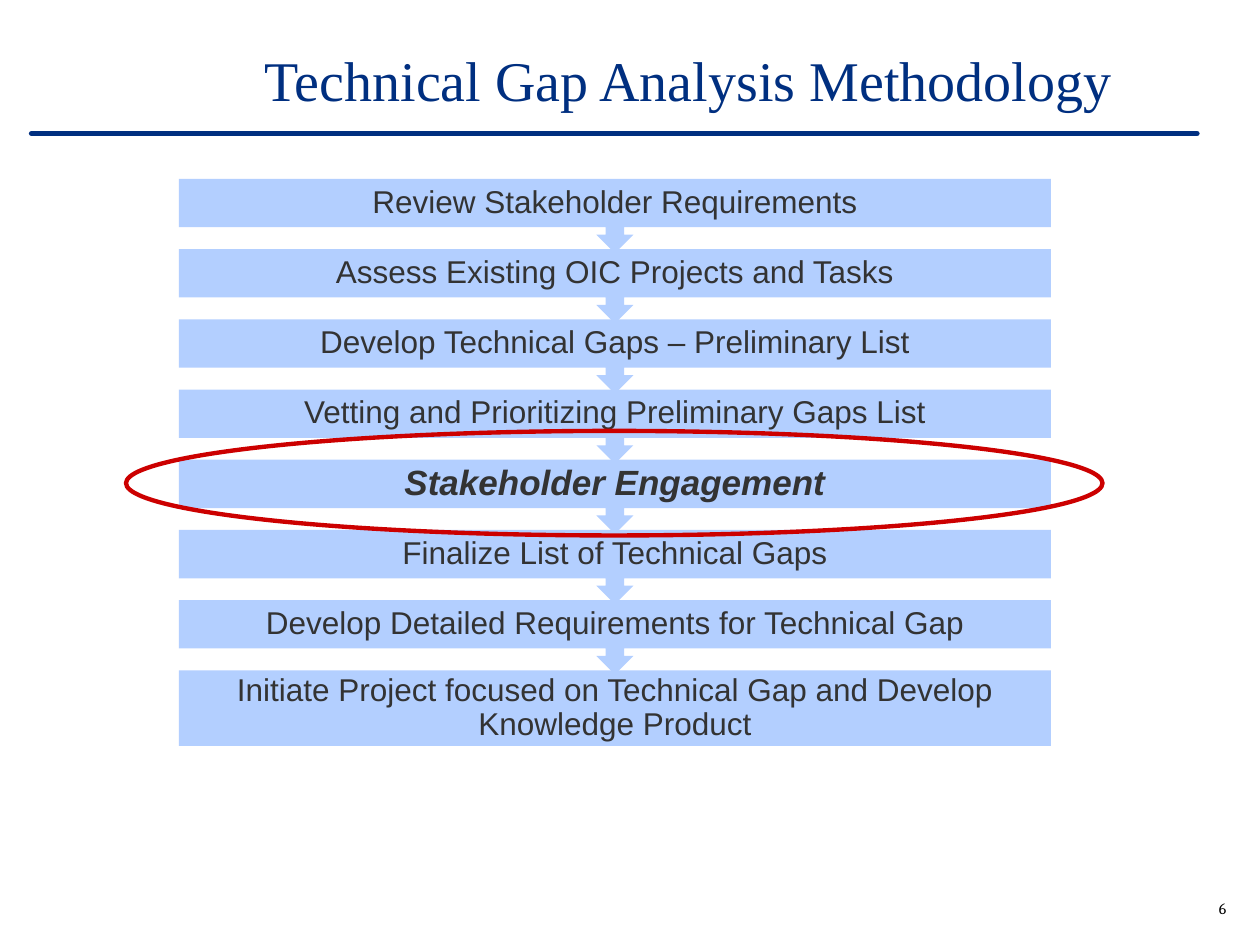
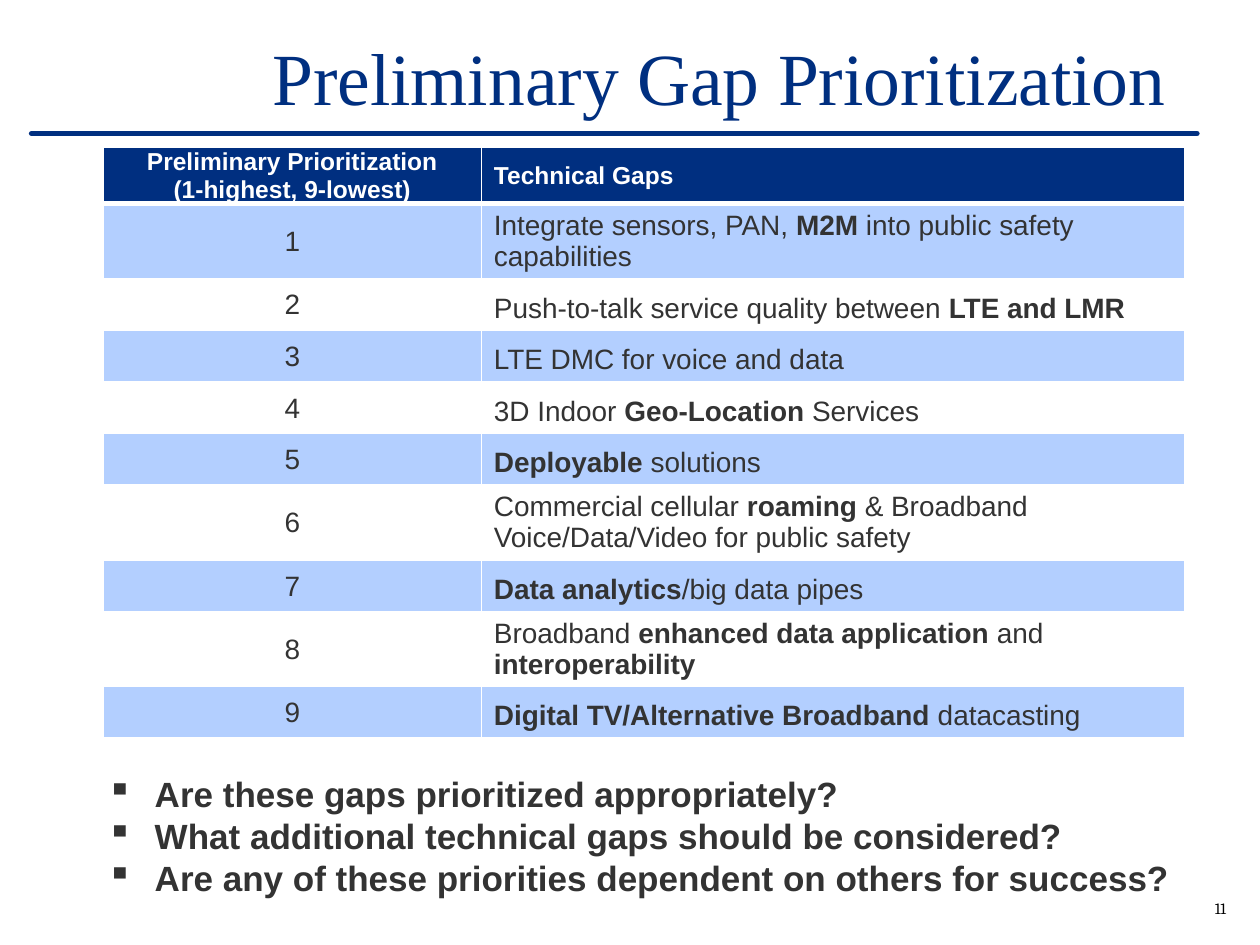
from lxml.etree import SubElement
from pptx import Presentation
from pptx.dml.color import RGBColor
from pptx.enum.shapes import MSO_CONNECTOR, MSO_SHAPE
from pptx.enum.text import MSO_ANCHOR, MSO_AUTO_SIZE, PP_ALIGN
from pptx.oxml.ns import qn
from pptx.util import Inches, Pt

COLORS = {"navy": "002F80", "sky": "B3CFFF", "red": "CC0000",
          "gray": "333333", "white": "FFFFFF", "black": "000000"}

STEPS = [
    "Review Stakeholder Requirements",
    "Assess Existing OIC Projects and Tasks",
    "Develop Technical Gaps – Preliminary List",
    "Vetting and Prioritizing Preliminary Gaps List",
    "Stakeholder Engagement",
    "Finalize List of Technical Gaps",
    "Develop Detailed Requirements for Technical Gap",
    "Initiate Project focused on Technical Gap and Develop Knowledge Product",
]
CURRENT_STEP = "Stakeholder Engagement"

GAPS = [
    "Integrate sensors, PAN, **M2M** into public safety capabilities",
    "Push-to-talk service quality between **LTE and LMR**",
    "LTE DMC for voice and data",
    "3D Indoor **Geo-Location** Services",
    "**Deployable** solutions",
    "Commercial cellular **roaming** & Broadband Voice/Data/Video for public safety",
    "**Data analytics**/big data pipes",
    "Broadband **enhanced data application** and **interoperability**",
    "**Digital TV/Alternative Broadband** datacasting",
]

QUESTIONS = [
    "Are these gaps prioritized appropriately?",
    "What additional technical gaps should be considered?",
    "Are any of these priorities dependent on others for success?",
]


def rgb(name):
    return RGBColor.from_string(COLORS[name])


class Deck:
    """Holds the shared style and the current slide."""

    def __init__(self):
        self.prs = Presentation()
        self.prs.slide_width, self.prs.slide_height = Inches(10), Inches(7.5)
        self.s = None

    def slide(self, title, box, size, number):
        self.s = self.prs.slides.add_slide(self.prs.slide_layouts[5])
        sp = self.s.shapes.title
        sp.left, sp.top, sp.width, sp.height = map(Inches, box)
        self.frame(sp.text_frame, [title], size=size, color="navy", name="Times New Roman")
        self.rule()
        self.text((9.25, 7.08, 0.58, 0.25), [str(number)], size=9, color="black",
                  name="Cambria", align=PP_ALIGN.RIGHT, anchor=MSO_ANCHOR.BOTTOM)

    def rule(self):
        y = Inches(1.06)
        cxn = self.s.shapes.add_connector(MSO_CONNECTOR.STRAIGHT, Inches(0.25), y, Inches(9.5), y)
        cxn.line.color.rgb = rgb("navy")
        cxn.line.width = Pt(3)
        cxn.line._get_or_add_ln().set("cap", "rnd")
        SubElement(cxn._element.spPr, qn("a:effectLst"))

    def frame(self, tf, lines, anchor=MSO_ANCHOR.MIDDLE, **style):
        tf.word_wrap = True
        tf.auto_size = MSO_AUTO_SIZE.NONE
        tf.vertical_anchor = anchor
        self.paragraphs(tf, lines, **style)

    def paragraphs(self, tf, lines, size, color="gray", name="Arial", bold=False,
                   italic=False, align=PP_ALIGN.LEFT, spacing=None, bullet=None):
        for i, line in enumerate(lines):
            p = tf.add_paragraph() if i else tf.paragraphs[0]
            p.alignment = align
            if spacing:
                p.line_spacing = spacing
            if bullet:
                pPr = p._p.get_or_add_pPr()
                pPr.set("marL", str(Inches(0.38)))
                pPr.set("indent", str(-Inches(0.38)))
                SubElement(pPr, qn("a:buChar"), char=bullet)
            for j, part in enumerate(line.split("**")):
                if part:
                    r = p.add_run()
                    r.text = part
                    style = {"size": Pt(size), "name": name, "bold": bold or j % 2 == 1,
                             "italic": italic}
                    for key, value in style.items():
                        setattr(r.font, key, value)
                    r.font.color.rgb = rgb(color)

    def text(self, box, lines, **style):
        sp = self.s.shapes.add_textbox(*map(Inches, box))
        self.frame(sp.text_frame, lines, **style)

    def shape(self, kind, box, fill=None, line=None, width=2.5):
        sp = self.s.shapes.add_shape(kind, *map(Inches, box))
        sp.shadow.inherit = False
        if fill:
            sp.fill.solid()
            sp.fill.fore_color.rgb = rgb(fill)
        else:
            sp.fill.background()
        if line:
            sp.line.color.rgb = rgb(line)
            sp.line.width = Pt(width)
        else:
            sp.line.fill.background()
        return sp

    def step(self, kind, box, label, current):
        tf = self.shape(kind, box, fill="sky").text_frame
        tf.margin_left = tf.margin_right = Inches(0.14)
        tf.margin_top = tf.margin_bottom = 0
        self.frame(tf, [label], size=20 if current else 18, bold=current, italic=current,
                   align=PP_ALIGN.CENTER, spacing=0.9)

    def borders(self, cell, **widths):
        tcPr = cell._tc.get_or_add_tcPr()
        for side in "LRTB":
            ln = SubElement(tcPr, qn(f"a:ln{side}"), w=str(Pt(widths.get(side, 1))))
            SubElement(SubElement(ln, qn("a:solidFill")), qn("a:srgbClr"), val=COLORS["white"])

    def cell(self, cell, lines, fill, centered, anchor=MSO_ANCHOR.MIDDLE, **style):
        cell.fill.solid()
        cell.fill.fore_color.rgb = rgb(fill)
        if centered:
            cell.margin_left = cell.margin_right = cell.margin_top = Inches(0.01)
            cell.margin_bottom = 0
        cell.vertical_anchor = anchor
        align = PP_ALIGN.CENTER if centered else PP_ALIGN.LEFT
        self.paragraphs(cell.text_frame, lines, align=align, **style)

    def table(self, box, widths, header, rows):
        tbl = self.s.shapes.add_table(len(rows) + 1, len(widths), *map(Inches, box)).table
        tbl.horz_banding = False
        for col, width in zip(tbl.columns, widths):
            col.width = Inches(width)
        for i, row in enumerate([header, *rows]):
            tbl.rows[i].height = Inches(0.41)
            for j, lines in enumerate(row):
                c = tbl.cell(i, j)
                if i == 0:
                    self.borders(c, B=3)
                    self.cell(c, lines, "navy", j == 0, size=14, color="white", bold=True)
                else:
                    self.borders(c, T=3 if i == 1 else 1)
                    self.cell(c, lines, "sky" if i % 2 else "white", j == 0, size=16,
                              anchor=MSO_ANCHOR.BOTTOM if j else MSO_ANCHOR.MIDDLE)


def methodology(deck):
    deck.slide("Technical Gap Analysis Methodology", (2, 0.25, 7.17, 0.75), 32, 6)
    top, last_top = 1.42, 5.32
    last = len(STEPS) - 1
    pitch = (last_top - top) / last
    for i, label in enumerate(STEPS):
        kind, height = ((MSO_SHAPE.DOWN_ARROW_CALLOUT, 0.59) if i < last
                        else (MSO_SHAPE.RECTANGLE, 0.6))
        deck.step(kind, (1.42, top + i * pitch, 6.92, height), label, label == CURRENT_STEP)
    deck.shape(MSO_SHAPE.OVAL, (1, 3.42, 7.75, 0.83), line="red")


def prioritization(deck):
    deck.slide("Preliminary Gap Prioritization", (2.06, 0.3, 7.42, 0.61), 42, 11)
    deck.text((0.75, 6.08, 8.7, 1.11), QUESTIONS, size=20, bold=True, bullet="▪",
              anchor=MSO_ANCHOR.TOP)
    header = [["Preliminary Prioritization", "(1-highest, 9-lowest)"], ["Technical Gaps"]]
    rows = [[[str(rank)], [gap]] for rank, gap in enumerate(GAPS, 1)]
    deck.table((0.82, 1.17, 8.58, 4.1), (3, 5.58), header, rows)


def main():
    deck = Deck()
    methodology(deck)
    prioritization(deck)
    deck.prs.save("out.pptx")


if __name__ == "__main__":
    main()
